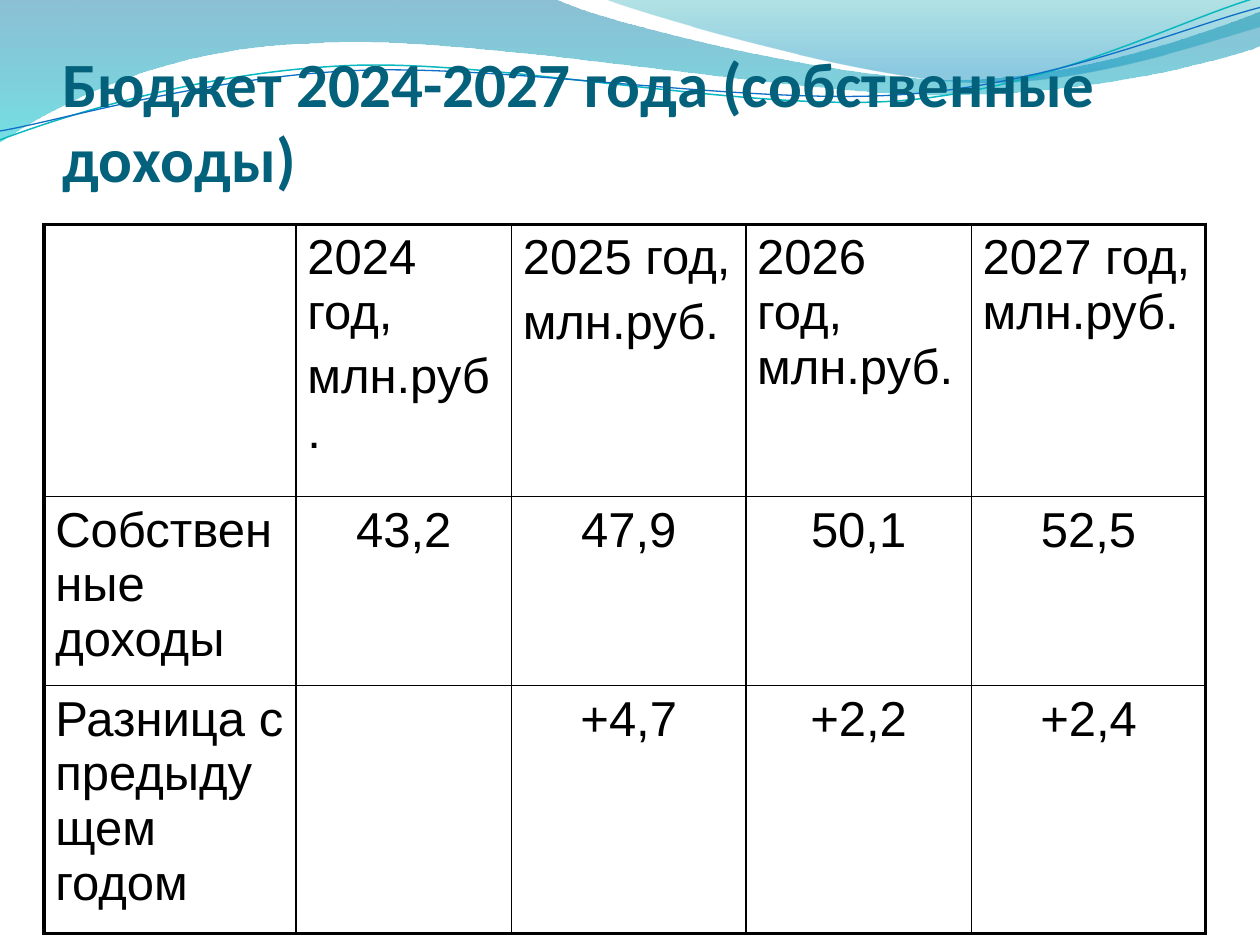
import math

from lxml import etree
from pptx import Presentation
from pptx.dml.color import RGBColor
from pptx.enum import text
from pptx.oxml.ns import qn
from pptx.util import Inches, Pt

THIN, THICK = 1, 2.25
LINE_TILT = 357.3

# Outlines: a start point, then lines (one point) or Bezier curves (three points).
WIDE_WAVE = [
    (-0.01, 0), [(4.4, -0.01)],
    [(4.76, 0.17), (6.64, 0.63), (7.58, 0.63)],
    [(8.53, 0.63), (9.58, 0.26), (10, 0.09)],
    [(10.01, 0.36)],
    [(9.83, 0.44), (8.7, 0.76), (7.46, 0.75)],
    [(6.22, 0.75), (3.82, 0.28), (2.57, 0.34)],
    [(1.29, 0.36), (0.46, 0.83), (-0.01, 1.13)],
    [(-0.01, 0)],
]
RIGHT_WAVE = [
    (4.79, -0.01),
    [(5.09, 0.11), (6.82, 0.62), (7.69, 0.65)],
    [(8.56, 0.69), (9.61, 0.32), (10, 0.21)],
    [(10, 0)], [(4.79, -0.01)],
]
TEAL_LINE = [
    (0, 1.11),
    [(0.48, 0.93), (1.58, 0.57), (2.77, 0.52)],
    [(3.95, 0.47), (5.93, 0.89), (7.13, 0.8)],
    [(8.33, 0.71), (9.38, 0.15), (9.98, -0.02)],
]
BLUE_LINE = [
    (0, 1.04),
    [(0.47, 0.96), (1.64, 0.61), (2.83, 0.56)],
    [(4.03, 0.51), (5.97, 0.84), (7.17, 0.75)],
    [(8.36, 0.67), (9.41, 0.21), (10, 0.06)],
]

COLUMN_WIDTHS = [2, 1.71, 1.86, 1.79, 1.86]
ROW_HEIGHTS = [2.16, 1.4, 1.84]
BUDGET = [
    ["", "2024 год,\nмлн.руб.", "2025 год,\nмлн.руб.",
     "2026 год, млн.руб.", "2027 год, млн.руб."],
    ["Собственные доходы", "43,2", "47,9", "50,1", "52,5"],
    ["Разница с предыдущем годом", "", "+4,7", "+2,2", "+2,4"],
]


def color(value):
    return RGBColor.from_string(value)


def apply(target, values):
    for name, value in values.items():
        setattr(target, name, value)


def turn(point, center, degrees):
    angle = math.radians(degrees)
    x, y = point[0] - center[0], point[1] - center[1]
    return (center[0] + x * math.cos(angle) - y * math.sin(angle),
            center[1] + x * math.sin(angle) + y * math.cos(angle))


def add_outline(slide, outline, close):
    """Lays all points as line segments, then joins each three into a curve."""
    points = outline[:1] + [point for segment in outline[1:] for point in segment]
    corners = [(Inches(x), Inches(y)) for x, y in points]
    builder = slide.shapes.build_freeform(*corners[0])
    builder.add_line_segments(corners[1:], close=close)
    shape = builder.convert_to_shape()
    shape.shadow.inherit = False
    lines = shape.element.spPr.iter(qn("a:lnTo"))
    lines = iter(list(lines))
    for segment in outline[1:]:
        first, *others = [next(lines) for _ in segment]
        if others:
            first.tag = qn("a:cubicBezTo")
            for other in others:
                first.append(other[0])
                other.getparent().remove(other)
    return shape


def add_wave(slide, outline, stops):
    """Stops run from top to bottom: position, colour, opacity in percent."""
    shape = add_outline(slide, outline, close=True)
    shape.line.fill.background()
    shape.fill.gradient()
    shape.fill.gradient_angle = 270
    for stop, (position, value, _) in zip(shape.fill.gradient_stops, stops):
        stop.position = position
        stop.color.rgb = color(value)
    for (_, _, opacity), element in zip(stops, shape.element.spPr.iter(qn("a:srgbClr"))):
        etree.SubElement(element, qn("a:alpha"), val=str(opacity * 1000))


def add_wave_line(slide, outline, center, value, width):
    """Levels the outline about its center, then tilts the shape back."""
    level = [turn(outline[0], center, -LINE_TILT)]
    level += [[turn(point, center, -LINE_TILT) for point in segment] for segment in outline[1:]]
    shape = add_outline(slide, level, close=False)
    shape.rotation = LINE_TILT
    shape.fill.background()
    shape.line.color.rgb = color(value)
    shape.line.width = Pt(width)


def add_header_waves(slide):
    add_wave(slide, WIDE_WAVE, [(0, "0074A1", 45), (1, "00C6CF", 55)])
    add_wave(slide, RIGHT_WAVE, [(0, "00A1A9", 30), (0.8, "008BBF", 45)])
    add_wave_line(slide, TEAL_LINE, (4.99, 0.58), "0AB8BF", 0.85)
    add_wave_line(slide, BLUE_LINE, (5, 0.59), "0F6FC6", 0.75)


def add_title(slide, left, top, width, height):
    box = slide.shapes.add_textbox(Inches(left), Inches(top), Inches(width), Inches(height))
    apply(box.text_frame, dict(
        word_wrap=True, vertical_anchor=text.MSO_ANCHOR.BOTTOM, margin_left=0,
        margin_top=Inches(0.05), margin_right=0, margin_bottom=0))
    run = box.text_frame.paragraphs[0].add_run()
    run.text = "Бюджет 2024-2027 года (собственные доходы)"
    apply(run.font, dict(name="Calibri", size=Pt(36), bold=True))
    run.font.color.rgb = color("04617B")


def set_borders(cell, widths):
    """Draws black borders; widths are in the order left, right, top, bottom."""
    properties = cell._tc.get_or_add_tcPr()
    for index, (side, width) in enumerate(zip("LRTB", widths)):
        line = etree.Element(qn(f"a:ln{side}"), w=str(Pt(width)))
        fill = etree.SubElement(line, qn("a:solidFill"))
        etree.SubElement(fill, qn("a:srgbClr"), val="000000")
        properties.insert(index, line)


def fill_cell(cell, content, centered):
    apply(cell, dict(margin_left=Inches(0.09), margin_right=Inches(0.09),
                     margin_top=Inches(0.05), margin_bottom=Inches(0.05)))
    cell.fill.background()
    cell.text_frame.text = content
    for index, paragraph in enumerate(cell.text_frame.paragraphs):
        for run in paragraph.runs:
            apply(run.font, dict(name="Arial", size=Pt(28), bold=False))
            run.font.color.rgb = color("000000")
        if centered:
            paragraph.alignment = text.PP_ALIGN.CENTER
        if index:
            paragraph.space_before = Pt(5.6)


def add_budget_table(slide, left, top):
    row_count, column_count = len(ROW_HEIGHTS), len(COLUMN_WIDTHS)
    frame = slide.shapes.add_table(
        row_count, column_count, Inches(left), Inches(top),
        Inches(sum(COLUMN_WIDTHS)), Inches(sum(ROW_HEIGHTS)))
    table = frame.table
    apply(table, dict(first_row=False, horz_banding=False))
    for column, width in zip(table.columns, COLUMN_WIDTHS):
        column.width = Inches(width)
    for row, height in zip(table.rows, ROW_HEIGHTS):
        row.height = Inches(height)
    for r, values in enumerate(BUDGET):
        for c, content in enumerate(values):
            cell = table.cell(r, c)
            fill_cell(cell, content, centered=r > 0 and c > 0)
            outer_sides = (c == 0, c == column_count - 1, r == 0, r == row_count - 1)
            set_borders(cell, [THICK if outer else THIN for outer in outer_sides])


def main():
    presentation = Presentation()
    apply(presentation, dict(slide_width=Inches(10), slide_height=Inches(7.5)))
    slide = presentation.slides.add_slide(presentation.slide_layouts[6])
    add_header_waves(slide)
    add_title(slide, 0.5, 0.3, 9, 1.25)
    add_budget_table(slide, 0.35, 1.78)
    presentation.save("out.pptx")


if __name__ == "__main__":
    main()
